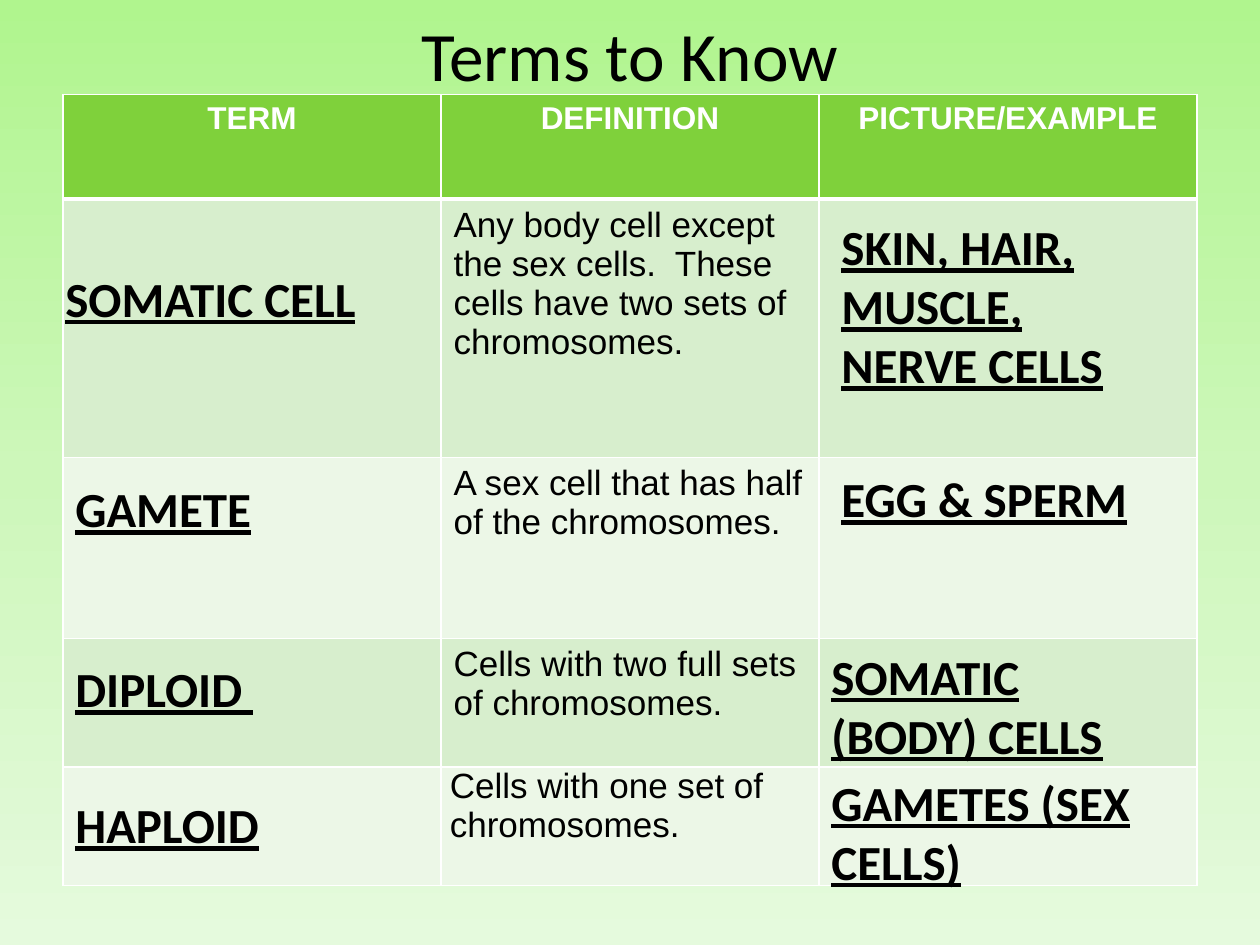
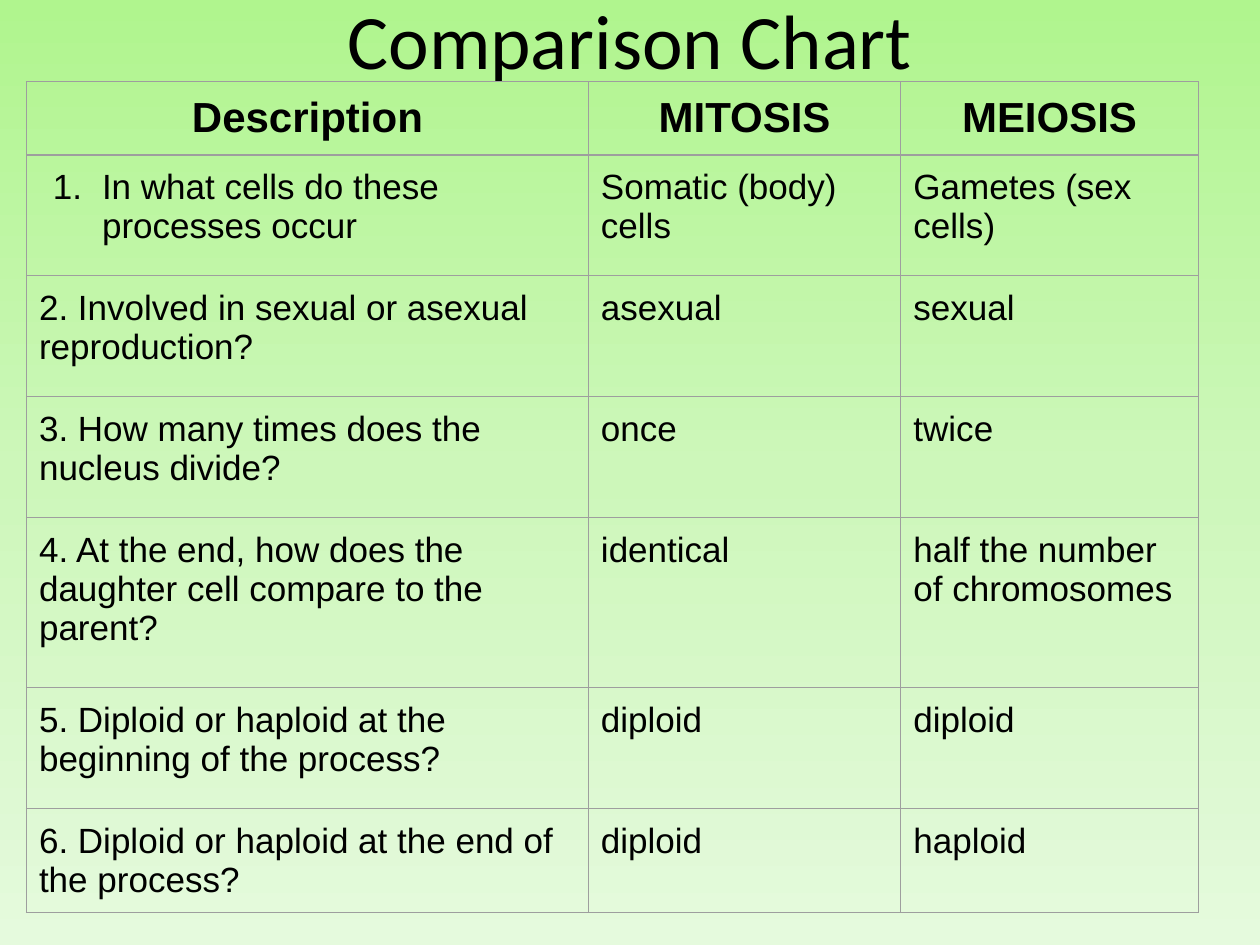
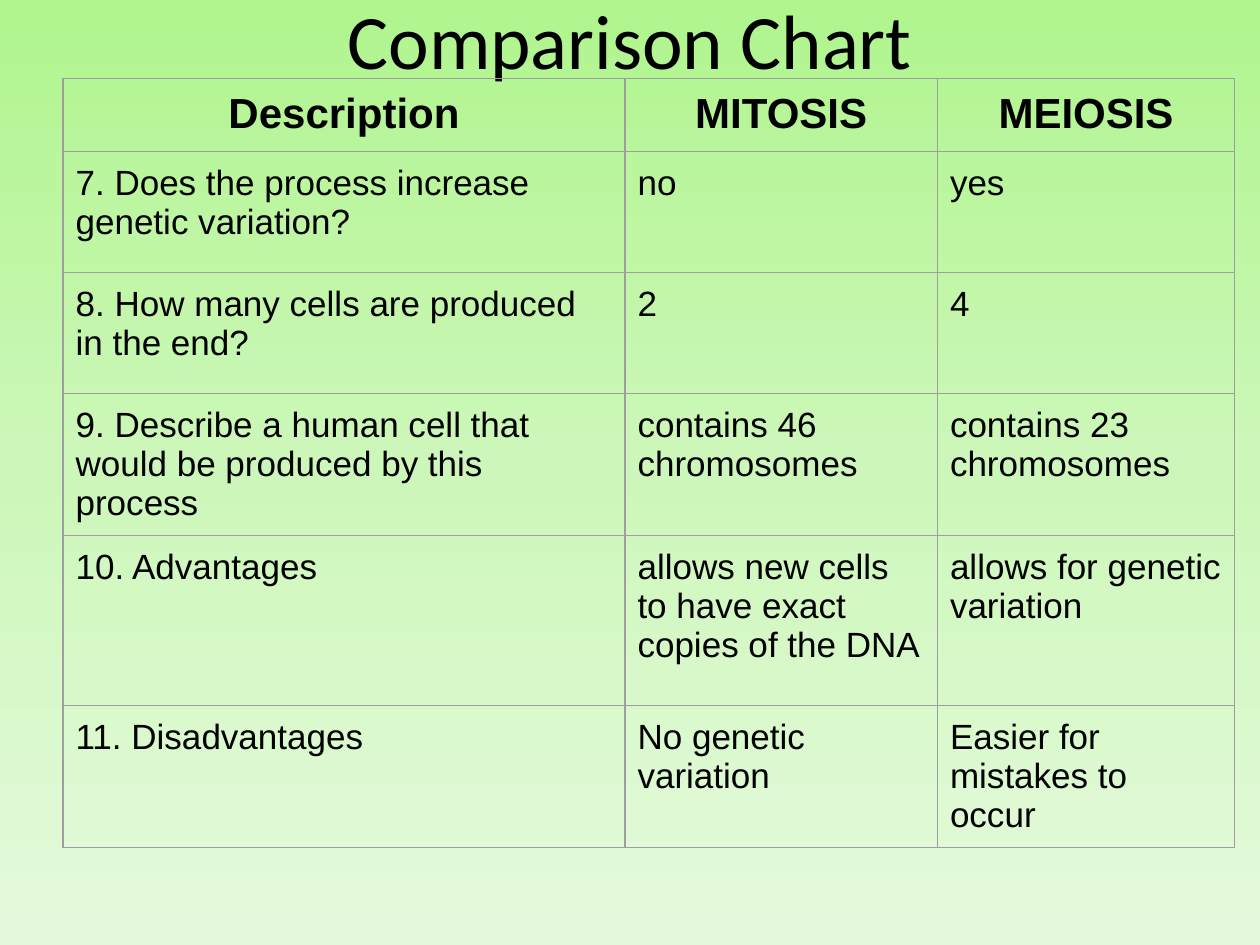
from copy import deepcopy
from dataclasses import dataclass

from lxml import etree
from pptx import Presentation
from pptx.dml.color import RGBColor
from pptx.enum.text import MSO_ANCHOR, MSO_AUTO_SIZE, PP_ALIGN
from pptx.oxml.ns import qn
from pptx.util import Inches, Pt

LEFT, CENTER = PP_ALIGN.LEFT, PP_ALIGN.CENTER
MIDDLE, TOP = MSO_ANCHOR.MIDDLE, MSO_ANCHOR.TOP
NO_AUTOFIT = MSO_AUTO_SIZE.NONE


@dataclass(frozen=True)
class Theme:
    backdrop: tuple = ("B0F58E", "CDF7BA", "E5FADD")
    ink: str = "000000"
    light: str = "FFFFFF"
    header: str = "7FD13B"
    bands: tuple = ("D7EECD", "ECF7E7")
    grid: str = "9E9E9E"
    display: str = "Calibri"
    body: str = "Arial"
    answer_size: float = 28
    text_size: float = 20
    term_head_size: float = 18
    chart_head_size: float = 24


THEME = Theme()
WIDTH, HEIGHT = 10, 7.5
INSET = 0.1
ANSWER_LINE = 0.47

TERM_HEADINGS = ("TERM", "DEFINITION", "PICTURE/EXAMPLE")
DEFINITIONS = (
    "Any body cell except the sex cells.  These cells have two sets of chromosomes.",
    "A sex cell that has half of the chromosomes.",
    "Cells with two full sets of chromosomes.",
    "Cells with one set of chromosomes.",
)
TERM_ROWS = (0.83, 2.05, 1.44, 1.02, 0.94)
ANSWERS = (
    ("SOMATIC CELL", 0.42, 2.08, 2.58, 1),
    ("GAMETE", 0.5, 3.75, 2.58, 1),
    ("DIPLOID ", 0.5, 5.18, 2.58, 1),
    ("HAPLOID", 0.5, 6.26, 2.58, 1),
    ("SKIN, HAIR, MUSCLE, NERVE CELLS", 6.58, 1.67, 2.58, 3),
    ("EGG & SPERM", 6.58, 3.67, 2.58, 1),
    ("SOMATIC (BODY) CELLS", 6.5, 5.08, 2.75, 2),
    ("GAMETES (SEX CELLS)", 6.5, 6.08, 2.58, 2),
)

COMPARISON_HEADINGS = ("Description", "MITOSIS", "MEIOSIS")
COMPARISON_COLUMNS = (4.46, 2.48, 2.36)
COMPARISONS = (
    {
        "left": 0.21, "top": 0.65,
        "heights": (0.58, 0.96, 0.96, 0.96, 1.35, 0.96, 0.82),
        "numbered": 1,
        "questions": (
            ("In what cells do these processes occur", "Somatic (body) cells", "Gametes (sex cells)"),
            ("2. Involved in sexual or asexual reproduction?", "asexual", "sexual"),
            ("3. How many times does the nucleus divide?", "once", "twice"),
            ("4. At the end, how does the daughter cell compare to the parent?",
             "identical", "half the number of chromosomes"),
            ("5. Diploid or haploid at the beginning of the process?", "diploid", "diploid"),
            ("6. Diploid or haploid at the end of the process?", "diploid", "haploid"),
        ),
    },
    {
        "left": 0.5, "top": 0.62,
        "heights": (0.58, 0.96, 0.96, 1.13, 1.35, 1.13),
        "numbered": None,
        "questions": (
            ("7. Does the process increase genetic variation?", "no", "yes"),
            ("8. How many cells are produced in the end?", "2", "4"),
            ("9. Describe a human cell that would be produced by this process",
             "contains 46 chromosomes", "contains 23 chromosomes"),
            ("10. Advantages", "allows new cells to have exact copies of the DNA",
             "allows for genetic variation"),
            ("11. Disadvantages", "No genetic variation", "Easier for mistakes to occur"),
        ),
    },
)


def write(frame, text, size=THEME.text_size, font=THEME.body, color=THEME.ink,
          bold=False, underline=False, align=LEFT):
    paragraph = frame.paragraphs[0]
    paragraph.alignment = align
    run = paragraph.add_run()
    run.text = text
    run.font.size = Pt(size)
    run.font.name = font
    run.font.bold = bold
    run.font.underline = underline
    run.font.color.rgb = RGBColor.from_string(color)


def set_margins(holder, across, down):
    holder.margin_left = holder.margin_right = Inches(across)
    holder.margin_top = holder.margin_bottom = Inches(down)


def paint_backdrop(master):
    fill = master.background.fill
    fill.gradient()
    fill.gradient_angle = 270
    stop_list = master.element.xpath(".//p:bg//a:gsLst")[0]
    stop_list.insert(1, deepcopy(stop_list[0]))
    last = len(THEME.backdrop) - 1
    for place, (stop, color) in enumerate(zip(fill.gradient_stops, THEME.backdrop)):
        stop.color.rgb = RGBColor.from_string(color)
        stop.position = place / last


def add_titled_slide(deck, text, top, height, size, down):
    slide = deck.slides.add_slide(deck.slide_layouts[5])
    title = slide.shapes.title
    title.left, title.top = Inches(0.5), Inches(top)
    title.width, title.height = Inches(WIDTH - 1), Inches(height)
    frame = title.text_frame
    frame.auto_size = NO_AUTOFIT
    frame.vertical_anchor = MIDDLE
    set_margins(frame, INSET, down)
    write(frame, text, size=size, font=THEME.display, align=CENTER)
    return slide


def add_grid(slide, left, top, columns, heights):
    table = slide.shapes.add_table(
        len(heights), len(columns), Inches(left), Inches(top),
        Inches(sum(columns)), Inches(sum(heights))).table
    table.first_row = table.horz_banding = False
    for column, width in zip(table.columns, columns):
        column.width = Inches(width)
    for row, height in zip(table.rows, heights):
        row.height = Inches(height)
    return table


def style_cell(cell, border, widths, fill=None, across=INSET, down=INSET):
    set_margins(cell, across, down)
    cell.vertical_anchor = TOP
    properties = cell._tc.get_or_add_tcPr()
    for side, points in zip("LRTB", widths):
        line = etree.SubElement(properties, qn(f"a:ln{side}"), w=str(Pt(points)))
        paint = etree.SubElement(line, qn("a:solidFill"))
        etree.SubElement(paint, qn("a:srgbClr"), val=border)
    if fill:
        cell.fill.solid()
        cell.fill.fore_color.rgb = RGBColor.from_string(fill)
    else:
        cell.fill.background()


def number_paragraph(paragraph, start):
    properties = paragraph._p.get_or_add_pPr()
    properties.set("marL", str(Inches(0.5)))
    properties.set("indent", str(Inches(-0.39)))
    etree.SubElement(properties, qn("a:buAutoNum"), type="arabicPeriod", startAt=str(start))


def build_terms(deck):
    slide = add_titled_slide(deck, "Terms to Know", 0.08, 0.7, 39.6, 0.05)
    table = add_grid(slide, 0.5, 0.75, (3, 3, 3), TERM_ROWS)
    last = len(DEFINITIONS)
    for col, heading in enumerate(TERM_HEADINGS):
        cell = table.cell(0, col)
        style_cell(cell, THEME.light, (1, 1, 1, 3), THEME.header, down=0.05)
        write(cell.text_frame, heading, size=THEME.term_head_size,
              color=THEME.light, bold=True, align=CENTER)
        for row in range(1, last + 1):
            tight = row == last and col == 1
            style_cell(table.cell(row, col), THEME.light,
                       (1, 1, 3 if row == 1 else 1, 1), THEME.bands[(row - 1) % 2],
                       across=0.07 if tight else INSET, down=0 if tight else 0.05)
    for row, definition in enumerate(DEFINITIONS, 1):
        write(table.cell(row, 1).text_frame, definition)
    for answer, left, top, width, lines in ANSWERS:
        frame = slide.shapes.add_textbox(
            Inches(left), Inches(top), Inches(width),
            Inches(lines * ANSWER_LINE + 0.1)).text_frame
        frame.word_wrap = True
        set_margins(frame, INSET, 0.05)
        write(frame, answer, size=THEME.answer_size, font=THEME.display,
              bold=True, underline=True)


def build_comparison(deck, comparison):
    slide = add_titled_slide(deck, "Comparison Chart", 0, 0.62, 44, 0.1)
    table = add_grid(slide, comparison["left"], comparison["top"],
                     COMPARISON_COLUMNS, comparison["heights"])
    for row, entries in enumerate((COMPARISON_HEADINGS, *comparison["questions"])):
        heading = row == 0
        for col, entry in enumerate(entries):
            cell = table.cell(row, col)
            style_cell(cell, THEME.grid, (0.75,) * 4)
            write(cell.text_frame, entry, bold=heading,
                  size=THEME.chart_head_size if heading else THEME.text_size,
                  align=CENTER if heading else LEFT)
    if comparison["numbered"]:
        number_paragraph(table.cell(1, 0).text_frame.paragraphs[0], comparison["numbered"])


def main():
    deck = Presentation()
    deck.slide_width, deck.slide_height = Inches(WIDTH), Inches(HEIGHT)
    paint_backdrop(deck.slide_master)
    build_terms(deck)
    for comparison in COMPARISONS:
        build_comparison(deck, comparison)
    deck.save("out.pptx")


if __name__ == "__main__":
    main()
